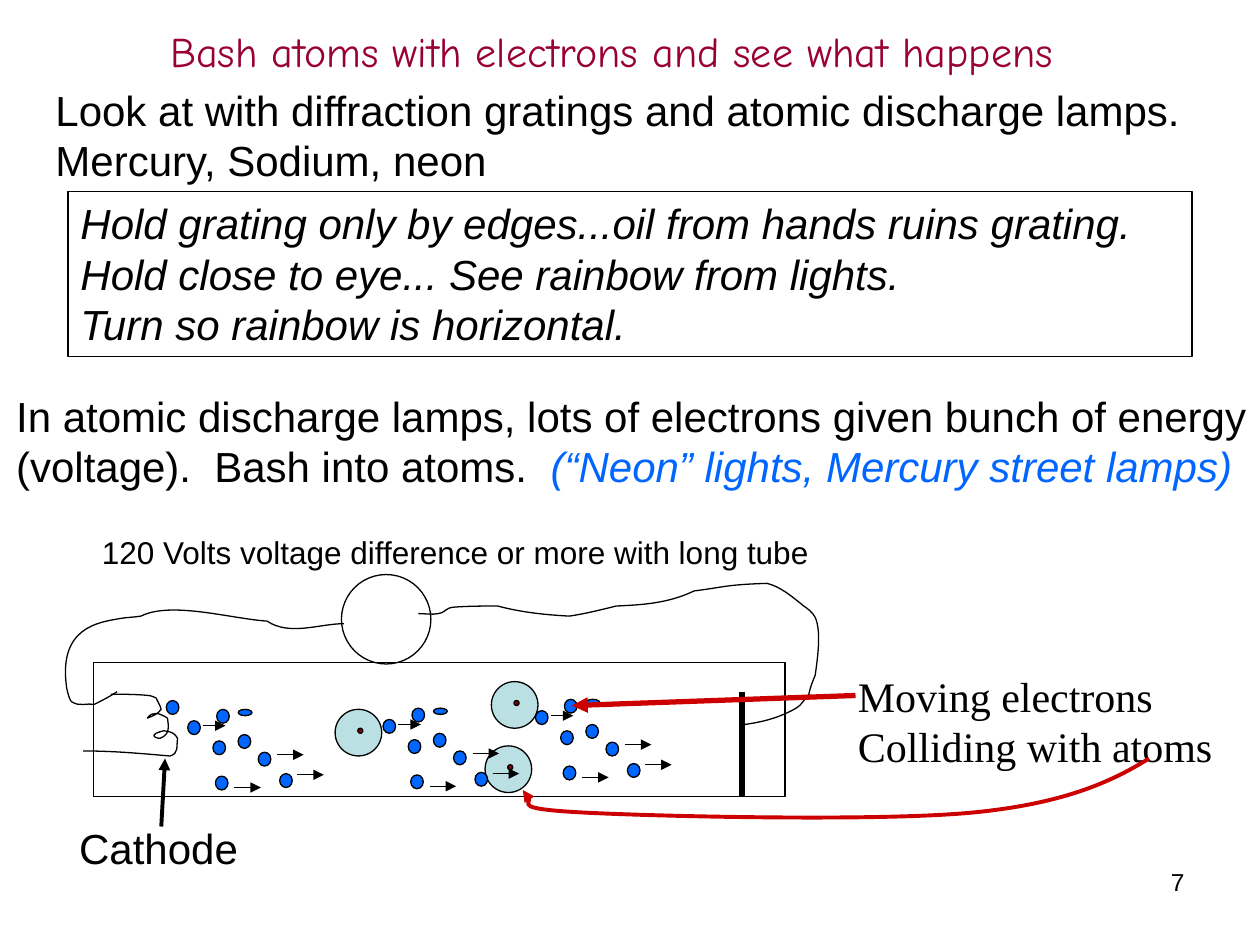
"""Build a slide on atomic discharge lamps with a diagram of electrons hitting atoms."""
from lxml import etree
from pptx import Presentation
from pptx.dml.color import RGBColor
from pptx.enum.shapes import MSO_CONNECTOR, MSO_SHAPE
from pptx.enum.text import MSO_ANCHOR, MSO_AUTO_SIZE, PP_ALIGN
from pptx.oxml.ns import qn
from pptx.util import Inches, Pt

OVAL, RECTANGLE = MSO_SHAPE.OVAL, MSO_SHAPE.RECTANGLE
STRAIGHT = MSO_CONNECTOR.STRAIGHT
LEFT, RIGHT = PP_ALIGN.LEFT, PP_ALIGN.RIGHT

COLORS = {
    "black": "000000", "electron": "0066FF", "atom": "BBE0E3",
    "nucleus": "800000", "title": "990033", "pointer": "CC0000",
}

TITLE = "Bash atoms with electrons and see what happens"
INTRO = [
    "Look at with diffraction gratings and atomic discharge lamps.",
    "Mercury, Sodium, neon",
]
GRATING_TIPS = [
    "Hold grating only by edges...oil from hands ruins grating.",
    "Hold close to eye... See rainbow from lights.",
    "Turn so rainbow is horizontal.",
]
LAMPS = [
    "In atomic discharge lamps, lots of electrons given bunch of energy",
    [("(voltage).  Bash into atoms.  ", {}),
     ("(“Neon” lights, Mercury street lamps)", {"color": "electron", "italic": True})],
]
LABELS = [
    (LAMPS, (0.03, 3.05, 9.97, 0.9), {}),
    (["120 Volts voltage difference or more with long tube"],
     (0.71, 4.18, 5.83, 0.4), {"size": 18}),
    (["Moving electrons", "Colliding with atoms"],
     (6.71, 5.27, 3.15, 0.9), {"font": "Times New Roman", "wrap": True}),
    (["Cathode"], (0.53, 6.48, 1.46, 0.5), {}),
    (["7"], (7.17, 6.83, 2.33, 0.52), {"size": 14, "align": RIGHT, "wrap": True}),
]

ELECTRON_SIZE = (0.1, 0.11)
FLAT_ELECTRON_SIZE = (0.11, 0.05)
ATOM_SIZE, NUCLEUS_SIZE = 0.37, 0.04
NUCLEUS_OFFSET = (0.18, 0.15)
LONE_ELECTRON = (1.32, 5.56)
ATOMS = [(2.66, 5.63), (3.85, 5.92), (3.9, 5.41)]
SWARMS = [(1.49, 5.72), (3.04, 5.71), (4.25, 5.64)]
SWARM_ELECTRONS = [(0, 0), (0.23, -0.09), (0.4, 0.11), (0.2, 0.16),
                   (0.56, 0.25), (0.73, 0.42), (0.22, 0.44)]
SWARM_FLAT_ELECTRON = (0.4, -0.09)
SWARM_ARROWS = [(0.12, 0.04, 0.18), (0.71, 0.27, 0.21),
                (0.87, 0.43, 0.21), (0.37, 0.53, 0.21)]

CATHODE_COIL = [
    (0.88, 5.51), (0.98, 5.51), (1.08, 5.51), (1.18, 5.52), (1.2, 5.52), (1.24, 5.54),
    (1.24, 5.54), (1.25, 5.57), (1.27, 5.59), (1.28, 5.63), (1.25, 5.67), (1.22, 5.68),
    (1.17, 5.7), (1.21, 5.64), (1.27, 5.66), (1.33, 5.7), (1.34, 5.77), (1.35, 5.83),
    (1.27, 5.86), (1.26, 5.86), (1.19, 5.85), (1.24, 5.82), (1.26, 5.81), (1.3, 5.8),
    (1.3, 5.8), (1.36, 5.81), (1.38, 5.81), (1.41, 5.86), (1.4, 5.93), (1.42, 5.98),
    (1.35, 6), (1.12, 5.98), (0.9, 5.96), (0.66, 5.96),
]
LEFT_WIRE = [
    (0.93, 5.49), (0.87, 5.53), (0.81, 5.56), (0.75, 5.59), (0.69, 5.58), (0.63, 5.61),
    (0.57, 5.57), (0.55, 5.56), (0.53, 5.46), (0.53, 5.46), (0.46, 4.98), (0.78, 4.94),
    (0.95, 4.91), (1, 4.9), (1.06, 4.9), (1.12, 4.89), (1.36, 4.77), (1.83, 4.91),
    (2.12, 4.93), (2.3, 5.05), (2.54, 4.95), (2.73, 4.95),
]
RIGHT_WIRE = [
    (5.91, 5.75), (6.05, 5.73), (6.18, 5.7), (6.32, 5.62), (6.36, 5.6), (6.39, 5.54),
    (6.42, 5.51), (6.43, 5.45), (6.47, 5.36), (6.47, 5.36), (6.49, 5.22), (6.52, 5.01),
    (6.47, 4.9), (6.45, 4.86), (6.41, 4.83), (6.38, 4.81), (6.28, 4.73), (6.2, 4.66),
    (6.09, 4.63), (5.76, 4.64), (5.75, 4.66), (5.51, 4.69), (5.3, 4.79), (5.1, 4.8),
    (4.89, 4.81), (4.77, 4.84), (4.65, 4.87), (4.52, 4.89), (4.33, 4.88), (4.14, 4.86),
    (3.95, 4.81), (3.83, 4.81), (3.71, 4.81), (3.59, 4.82), (3.55, 4.82), (3.52, 4.87),
    (3.48, 4.87), (3.43, 4.88), (3.37, 4.87), (3.32, 4.87),
]
COLLISION_POINTER = [
    (9.12, 6.02), (8.83, 6.2), (8.45, 6.38), (7.71, 6.45), (6.96, 6.52), (5.24, 6.48),
    (4.65, 6.45), (4.06, 6.42), (4.25, 6.31), (4.15, 6.27),
]


def rgb(name):
    """Return the named colour."""
    return RGBColor.from_string(COLORS[name])


def place(shape, box):
    """Move a shape to a box in inches."""
    shape.left, shape.top, shape.width, shape.height = map(Inches, box)


def write(shape, lines, size=24, font="Arial", color="black", italic=False,
          align=LEFT, wrap=False):
    """Fill a shape with formatted paragraphs without bullets."""
    frame = shape.text_frame
    frame.word_wrap = wrap
    frame.auto_size = MSO_AUTO_SIZE.SHAPE_TO_FIT_TEXT
    frame.vertical_anchor = MSO_ANCHOR.TOP
    for index, line in enumerate(lines):
        paragraph = frame.add_paragraph() if index else frame.paragraphs[0]
        paragraph.alignment = align
        paragraph.space_before = Pt(0)
        properties = paragraph._p.get_or_add_pPr()
        properties.set("marL", "0")
        properties.set("indent", "0")
        etree.SubElement(properties, qn("a:buNone"))
        for text, style in [(line, {})] if isinstance(line, str) else line:
            run = paragraph.add_run()
            run.text = text
            run.font.size = Pt(size)
            run.font.name = font
            run.font.italic = style.get("italic", italic)
            run.font.color.rgb = rgb(style.get("color", color))


def outline(shape, color="black", width=0.75, arrow=False):
    """Set the line of a shape, remove its shadow and add an arrowhead on request."""
    shape.line.color.rgb = rgb(color)
    shape.line.width = Pt(width)
    properties = shape._element.spPr
    if arrow:
        etree.SubElement(properties.find(qn("a:ln")), qn("a:tailEnd"), type="triangle")
    etree.SubElement(properties, qn("a:effectLst"))


def add_figure(slide, kind, box, fill=None):
    """Add an outlined preset shape."""
    shape = slide.shapes.add_shape(kind, *map(Inches, box))
    if fill:
        shape.fill.solid()
        shape.fill.fore_color.rgb = rgb(fill)
    else:
        shape.fill.background()
    outline(shape)
    return shape


def add_line(slide, start, end, **line_format):
    """Add a straight line."""
    connector = slide.shapes.add_connector(STRAIGHT, *map(Inches, (*start, *end)))
    outline(connector, **line_format)


def add_curve(slide, points, **line_format):
    """Add an open curve through Bezier points: a start, then three per segment."""
    start, *rest = [(Inches(x), Inches(y)) for x, y in points]
    builder = slide.shapes.build_freeform(*start)
    builder.add_line_segments(rest, close=False)
    shape = builder.convert_to_shape()
    segments = list(shape._element.iter(qn("a:lnTo")))
    for first in range(0, len(segments), 3):
        bezier = etree.SubElement(segments[first].getparent(), qn("a:cubicBezTo"))
        for segment in segments[first:first + 3]:
            bezier.append(segment[0])
            segment.getparent().remove(segment)
    shape.fill.background()
    outline(shape, **line_format)


def add_swarm(slide, left, top):
    """Add a group of electrons moving right."""
    for x, y in SWARM_ELECTRONS:
        add_figure(slide, OVAL, (left + x, top + y, *ELECTRON_SIZE), "electron")
    x, y = SWARM_FLAT_ELECTRON
    add_figure(slide, OVAL, (left + x, top + y, *FLAT_ELECTRON_SIZE), "electron")
    for x, y, length in SWARM_ARROWS:
        add_line(slide, (left + x, top + y), (left + x + length, top + y), arrow=True)


def main():
    """Assemble and save the slide."""
    presentation = Presentation()
    presentation.slide_width, presentation.slide_height = Inches(10), Inches(7.5)
    slide = presentation.slides.add_slide(presentation.slide_layouts[1])
    title, body = slide.placeholders
    place(title, (1.25, 0.15, 7.73, 0.5))
    write(title, [TITLE], font="Comic Neue", color="title")
    place(body, (0.34, 0.62, 9.14, 0.9))
    write(body, INTRO)
    add_figure(slide, OVAL, (*LONE_ELECTRON, *ELECTRON_SIZE), "electron")
    add_curve(slide, CATHODE_COIL)
    for left, top in ATOMS:
        add_figure(slide, OVAL, (left, top, ATOM_SIZE, ATOM_SIZE), "atom")
        x, y = NUCLEUS_OFFSET
        add_figure(slide, OVAL, (left + x, top + y, NUCLEUS_SIZE, NUCLEUS_SIZE), "nucleus")
    for left, top in SWARMS:
        add_swarm(slide, left, top)
    add_line(slide, (5.89, 5.49), (5.89, 6.32), width=3)
    add_curve(slide, LEFT_WIRE)
    add_curve(slide, RIGHT_WIRE)
    add_figure(slide, OVAL, (2.71, 4.56, 0.71, 0.71))
    add_figure(slide, RECTANGLE, (0.74, 5.26, 5.49, 1.06))
    tips = add_figure(slide, RECTANGLE, (0.54, 1.52, 8.92, 1.31))
    write(tips, GRATING_TIPS, italic=True, wrap=True)
    for lines, box, text_format in LABELS:
        write(slide.shapes.add_textbox(*map(Inches, box)), lines, **text_format)
    add_line(slide, (6.79, 5.52), (4.54, 5.6), color="pointer", width=3, arrow=True)
    add_curve(slide, COLLISION_POINTER, color="pointer", width=2.25, arrow=True)
    add_line(slide, (1.28, 6.56), (1.31, 6.02), width=2.25, arrow=True)
    presentation.save("out.pptx")


if __name__ == "__main__":
    main()
